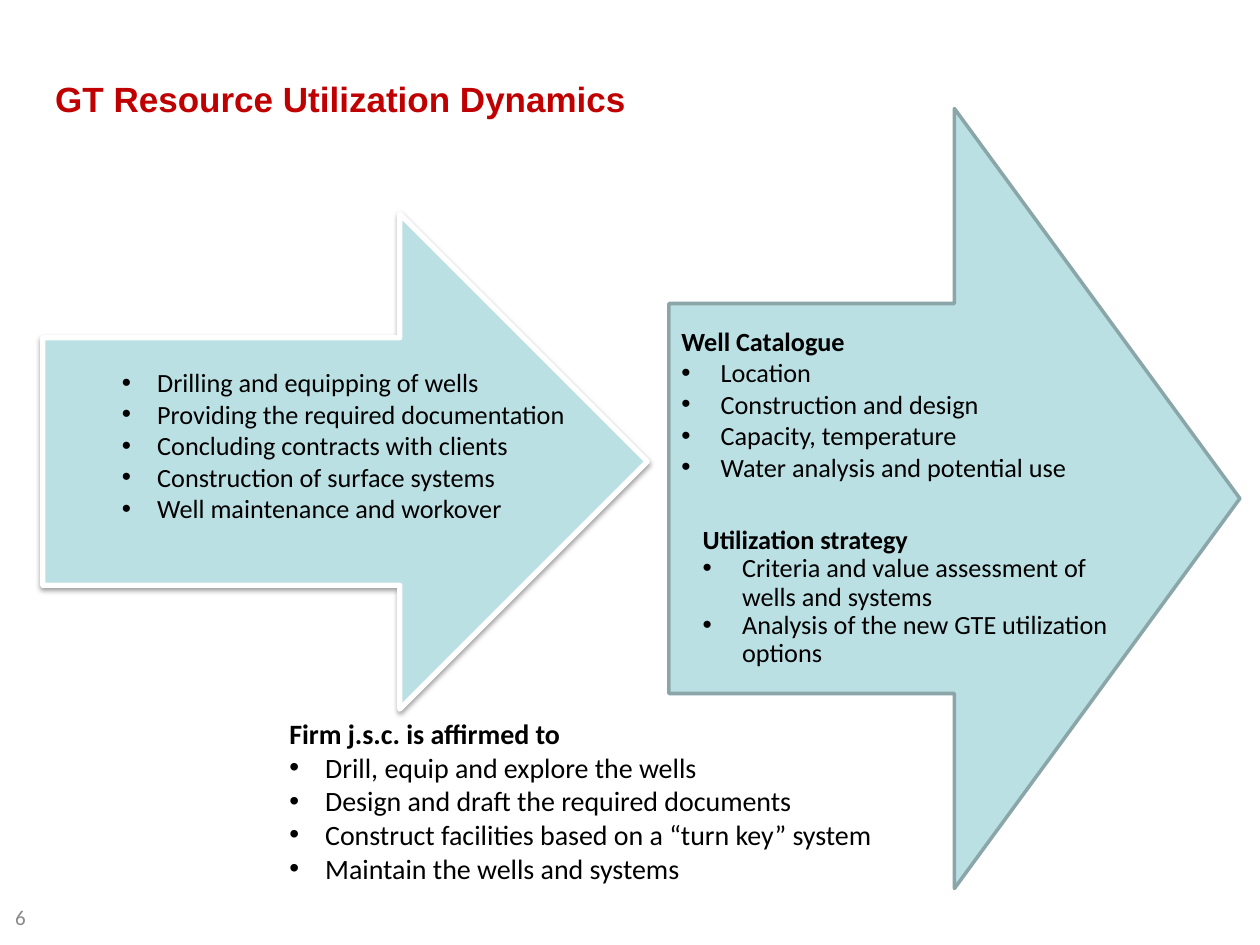
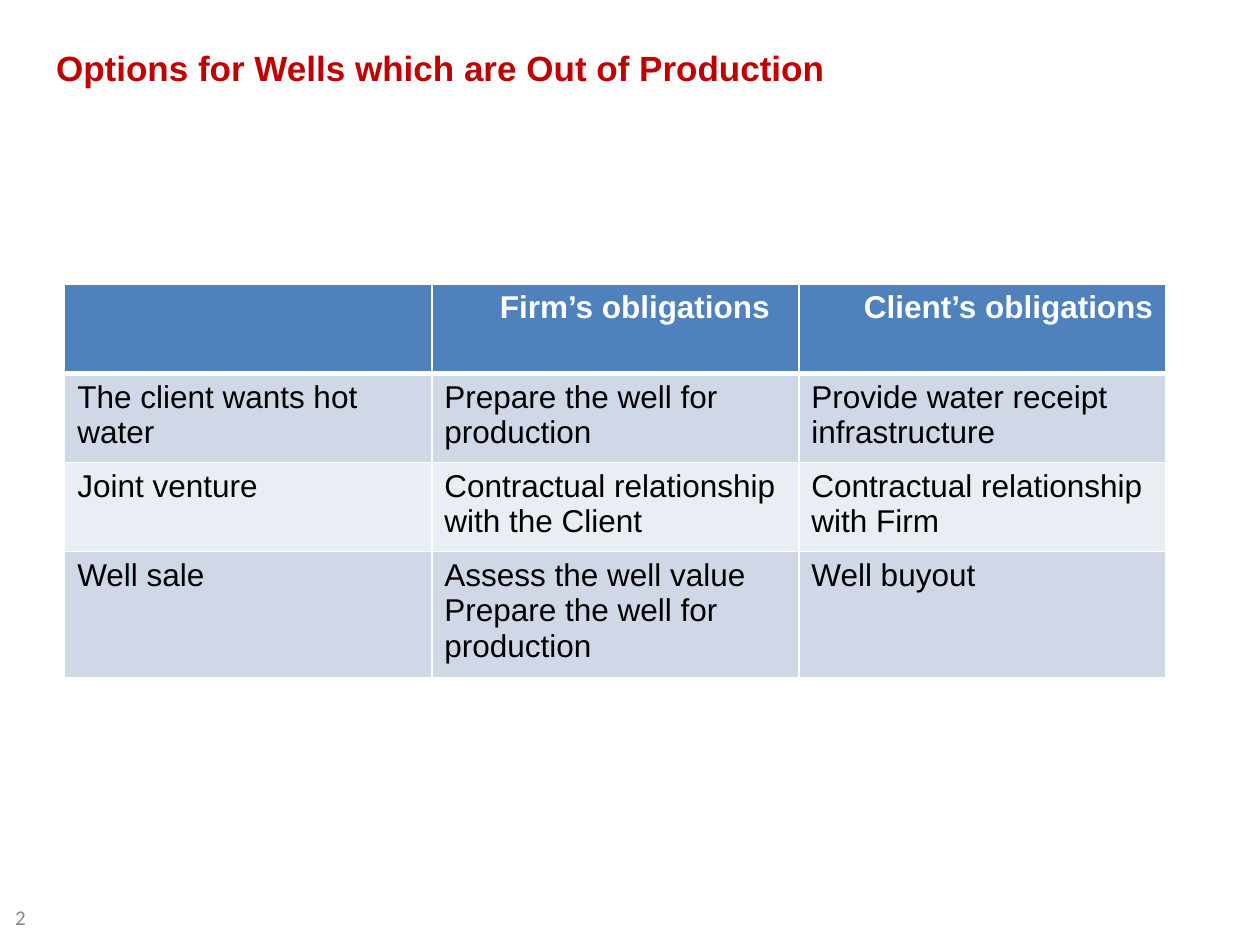
import pptx
import pptx.dml.color
import pptx.enum.shapes
import pptx.enum.text
import pptx.oxml
import pptx.oxml.ns
import pptx.util
from lxml import etree

Pt = pptx.util.Pt
ALIGN = pptx.enum.text.PP_ALIGN
ANCHOR = pptx.enum.text.MSO_ANCHOR
RIGHT_ARROW = pptx.enum.shapes.MSO_SHAPE.RIGHT_ARROW

COLORS = {
    "title": "C00000",
    "text": "000000",
    "number": "898989",
    "white": "FFFFFF",
    "arrow": "BBE0E3",
    "arrow_edge": "8AA6A8",
    "header": "4F81BD",
    "band_dark": "D0D8E8",
    "band_light": "E9EDF4",
}


def rgb(name):
    return pptx.dml.color.RGBColor.from_string(COLORS[name])


def add_child(parent, tag, **attributes):
    child = etree.SubElement(parent, pptx.oxml.ns.qn(tag))
    for key, value in attributes.items():
        child.set(key, str(value))
    return child


def format_runs(para, size, color, font="Calibri", bold=False):
    for span in para.runs:
        span.font.name = font
        span.font.size = Pt(size)
        span.font.bold = bold
        span.font.color.rgb = rgb(color)


def add_box(page, left, top, width, height):
    box = page.shapes.add_textbox(Pt(left), Pt(top), Pt(width), Pt(height))
    box.text_frame.word_wrap = True
    return box.text_frame


def add_page(deck, title, left, top, number):
    """Blank page with the shared title style and page number."""
    page = deck.slides.add_slide(deck.slide_layouts[6])
    frame = add_box(page, left, top, 510, 57)
    frame.text = title
    frame.paragraphs[0].line_spacing = 0.9
    format_runs(frame.paragraphs[0], 20, "title", "Arial", True)

    frame = add_box(page, 1.5, 509.75, 168, 29)
    frame.vertical_anchor = ANCHOR.MIDDLE
    frame.text = number
    format_runs(frame.paragraphs[0], 12, "number")
    return page


def add_arrow(page, left, top, width, height, edge, edge_width):
    arrow = page.shapes.add_shape(RIGHT_ARROW, Pt(left), Pt(top), Pt(width), Pt(height))
    arrow.shadow.inherit = False
    arrow.fill.solid()
    arrow.fill.fore_color.rgb = rgb("arrow")
    arrow.line.color.rgb = rgb(edge)
    arrow.line.width = Pt(edge_width)
    return arrow


def add_soft_shadow(shape):
    effects = shape._element.spPr.find(pptx.oxml.ns.qn("a:effectLst"))
    shadow = add_child(effects, "a:outerShdw", blurRad=Pt(3.1), dist=Pt(1.6),
                       dir=90 * 60000, rotWithShape=0)
    color = add_child(shadow, "a:srgbClr", val=COLORS["text"])
    add_child(color, "a:alpha", val=38000)


def add_bullet(para, indent):
    properties = para._p.get_or_add_pPr()
    properties.set("marL", str(Pt(indent)))
    properties.set("indent", str(-Pt(indent)))
    add_child(properties, "a:buFont", typeface="Arial")
    add_child(properties, "a:buChar", char="•")


def add_list(page, area, items, heading=None, size=15, indent=22.5, spacing=1.0):
    """Bulleted list, with an optional bold heading line."""
    frame = add_box(page, *area)
    lines = ([heading] if heading else []) + items
    frame.text = "\n".join(lines)
    for index, para in enumerate(frame.paragraphs):
        is_heading = bool(heading) and index == 0
        if not is_heading:
            add_bullet(para, indent)
        para.line_spacing = spacing
        format_runs(para, size, "text", bold=is_heading)


def set_borders(cell, top, bottom):
    properties = cell._tc.get_or_add_tcPr()
    for side, width in (("L", 1), ("R", 1), ("T", top), ("B", bottom)):
        line = add_child(properties, "a:ln" + side, w=Pt(width))
        fill = add_child(line, "a:solidFill")
        add_child(fill, "a:srgbClr", val=COLORS["white"])


def add_options_table(page, rows, left, top, column_width, row_heights):
    table = page.shapes.add_table(
        len(rows), len(rows[0]), Pt(left), Pt(top),
        Pt(column_width * len(rows[0])), Pt(sum(row_heights))).table
    for column in table.columns:
        column.width = Pt(column_width)
    for r, texts in enumerate(rows):
        table.rows[r].height = Pt(row_heights[r])
        is_header = r == 0
        fill = "header" if is_header else ("band_dark" if r % 2 else "band_light")
        for c, text in enumerate(texts):
            cell = table.cell(r, c)
            set_borders(cell, 3 if r == 1 else 1, 3 if is_header else 1)
            cell.fill.solid()
            cell.fill.fore_color.rgb = rgb(fill)
            cell.text_frame.text = text
            for para in cell.text_frame.paragraphs:
                para.alignment = ALIGN.RIGHT if is_header else ALIGN.LEFT
                format_runs(para, 18, "white" if is_header else "text", "Arial", is_header)
    return table


def build_dynamics(deck):
    page = add_page(deck, "GT Resource Utilization Dynamics", 24.5, 43.25, "6")

    # Arrows
    services_arrow = add_arrow(page, 24.5, 122.25, 345.5, 283, "white", 3)
    add_soft_shadow(services_arrow)
    add_arrow(page, 382.25, 62, 326.25, 445.75, "arrow_edge", 2)

    # Lists
    add_list(page, (62.5, 206, 276, 98), [
        "Drilling and equipping of wells",
        "Providing the required documentation",
        "Concluding contracts with clients",
        "Construction of surface systems",
        "Well maintenance and workover",
    ], indent=20.25)
    add_list(page, (382.25, 182.25, 266.5, 98), [
        "Location",
        "Construction and design",
        "Capacity, temperature",
        "Water analysis and potential use",
    ], "Well Catalogue")
    add_list(page, (158.25, 406, 360, 104.5), [
        "Drill, equip and explore the wells",
        "Design and draft the required documents",
        "Construct facilities based on a “turn key” system",
        "Maintain the wells and systems",
    ], "Firm j.s.c. is affirmed to", size=16, indent=20.5)
    add_list(page, (394.5, 297.5, 266.5, 107), [
        "Criteria and value assessment of wells and systems",
        "Analysis of the new GTE utilization options",
    ], "Utilization strategy", spacing=0.9)


def build_options(deck):
    page = add_page(deck, "Options for Wells which are Out of Production", 25, 26, "2")
    table = add_options_table(page, [
        ["", "Firm’s obligations", "Client’s obligations"],
        ["The client wants hot water", "Prepare the well for production",
         "Provide water receipt\ninfrastructure"],
        ["Joint venture", "Contractual relationship with the Client",
         "Contractual relationship with Firm"],
        ["Well sale", "Assess the well value\nPrepare the well for production",
         "Well buyout"],
    ], 37, 162.25, 209.75, [51, 51, 51, 67])
    table.cell(0, 1).margin_right = Pt(16.5)


def main():
    deck = pptx.Presentation()
    deck.slide_width = Pt(720)
    deck.slide_height = Pt(540)
    build_dynamics(deck)
    build_options(deck)
    deck.save("out.pptx")


if __name__ == "__main__":
    main()
